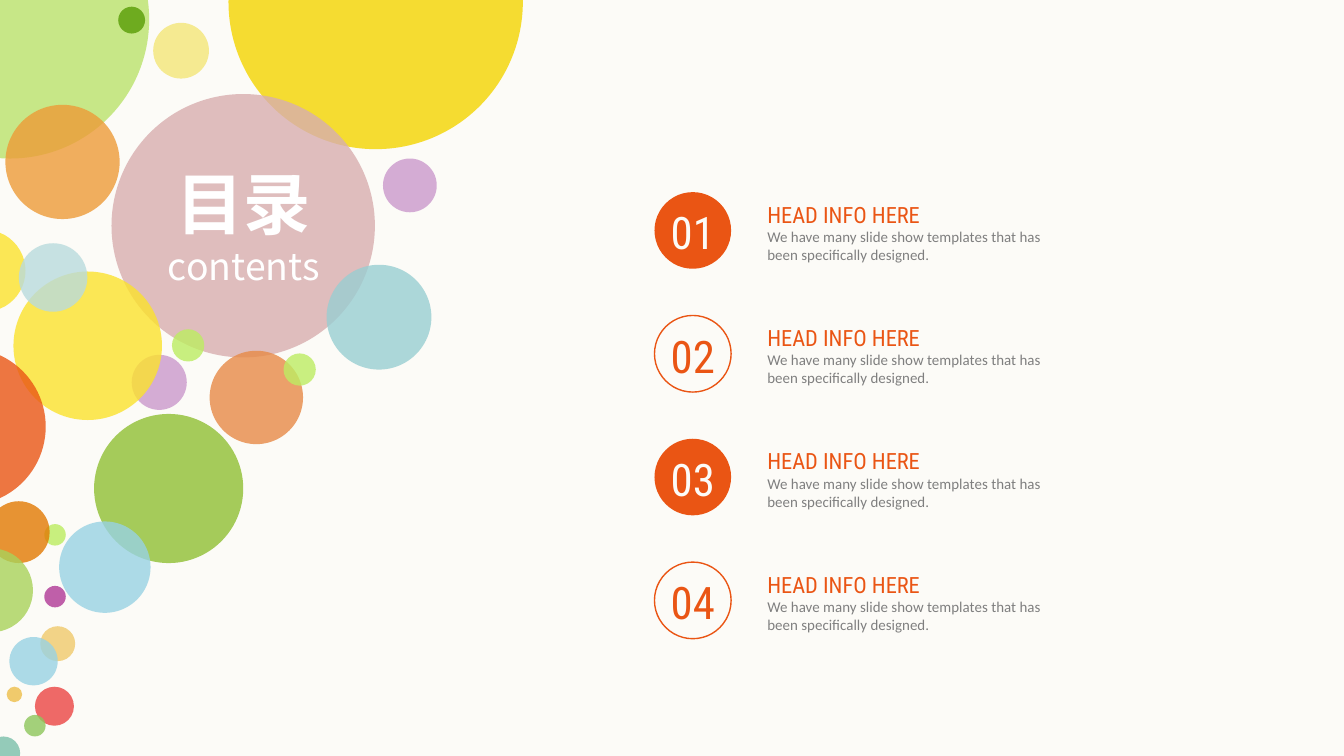
from collections import namedtuple

from lxml.etree import SubElement
from pptx import Presentation
from pptx.dml.color import RGBColor
from pptx.enum.shapes import MSO_SHAPE as Shape
from pptx.enum.text import MSO_AUTO_SIZE as AutoSize, PP_ALIGN as Align
from pptx.oxml.ns import qn
from pptx.util import Inches, Pt

# Square grid: the slide is 100 columns wide and 56.25 rows high
COLUMNS, ROWS = 100, 56.25
MODULE = Inches(10) / COLUMNS

PAPER, ORANGE, GRAY, WHITE = "FCFBF7", "EA5514", "7F7F7F", "FFFFFF"
HEAD_FONT, BODY_FONT, TITLE_FONT = "Roboto Condensed", "Calibri", "Noto Sans CJK SC"

Box = namedtuple("Box", "left top width height")
Span = namedtuple("Span", "text size font color bold", defaults=(False,))

# Left, top and diameter in grid modules, colour, opacity in percent; back to front
BUBBLES = [
    (-9.6, -8.9, 20.7, "BAE36B", 80),
    (8.8, 0.5, 2, "6EAB1F", 100),
    (0.4, 7.8, 8.5, "ED9B38", 80),
    (11.4, 1.7, 4.15, "F5EA91", 100),
    (17, -10.8, 21.9, "F4D500", 80),
    (8.3, 7, 19.6, "D8AEAF", 80),
    (24.3, 19.7, 7.8, "99CED2", 80),
    (28.5, 11.8, 4, "CB99CC", 80),
    (15.6, 26.1, 6.95, "E78A47", 80),
    (7, 30.8, 11.1, "A5CB5A", 100),
    (21.1, 26.3, 2.4, "BDED63", 80),
    (12.8, 24.5, 2.4, "BCED61", 80),
    (9.8, 26.4, 4.1, "CB99CC", 80),
    (1, 20.2, 11.05, "FBE22D", 80),
    (-4.2, 17.1, 6.1, "FBE22D", 80),
    (3.3, 39, 1.6, "BCED60", 80),
    (3.3, 43.6, 1.6, "B03896", 80),
    (3, 46.6, 2.6, "F0CA6C", 80),
    (0.5, 51.1, 1.15, "F0CA6C", 100),
    (-1, 54.8, 2.5, "7BBFAA", 80),
    (2.6, 51.1, 2.9, "EB4544", 80),
    (1.8, 53.2, 1.6, "8DC65B", 80),
    (0.7, 47.4, 3.6, "98D2E3", 80),
    (1.4, 18.1, 5.1, "B9DBDD", 80),
    (4.4, 38.8, 6.8, "98D2E3", 80),
    (-0.9, 37.3, 4.6, "E27902", 80),
    (-3.8, 40.8, 6.25, "A9D25A", 80),
    (-8.3, 25.9, 11.7, "EA5514", 80),
]

ENTRY = ("HEAD INFO HERE",
         "We have many slide show templates that has been specifically designed.")
ENTRIES = [ENTRY] * 4


def rgb(color):
    return RGBColor.from_string(color)


def to_length(box):
    return [round(value * MODULE) for value in box]


def add_circle(page, left, top, diameter, fill=None, opacity=100, line=None):
    circle = page.shapes.add_shape(
        Shape.OVAL, *to_length((left, top, diameter, diameter)))
    circle.shadow.inherit = False
    if fill:
        circle.fill.solid()
        circle.fill.fore_color.rgb = rgb(fill)
        if opacity < 100:
            color = circle.fill._xPr.find(f".//{qn('a:srgbClr')}")
            SubElement(color, qn("a:alpha"), val=str(opacity * 1000))
    else:
        circle.fill.background()
    if line:
        circle.line.color.rgb = rgb(line)
        circle.line.width = Pt(0.75)
    else:
        circle.line.fill.background()


def add_text(page, box, spans, align=Align.LEFT):
    """Place a text box with one paragraph for each span."""
    frame = page.shapes.add_textbox(*to_length(box)).text_frame
    frame.word_wrap = True
    frame.auto_size = AutoSize.SHAPE_TO_FIT_TEXT
    frame.margin_left = frame.margin_right = 0
    frame.margin_top = frame.margin_bottom = 0
    for index, span in enumerate(spans):
        para = frame.add_paragraph() if index else frame.paragraphs[0]
        para.alignment = align
        run = para.add_run()
        run.text = span.text
        run.font.size = Pt(span.size)
        run.font.bold = span.bold
        run.font.color.rgb = rgb(span.color)
        run.font.name = span.font
        SubElement(run.font._element, qn("a:ea"), typeface=span.font)


def draw_bubbles(page, box):
    for left, top, diameter, color, opacity in BUBBLES:
        add_circle(page, box.left + left, box.top + top, diameter, color, opacity)


def draw_title(page, box):
    add_text(page, box, [
        Span("目录", 36, TITLE_FONT, WHITE, True),
        Span("contents", 20, TITLE_FONT, WHITE),
    ], Align.CENTER)


def draw_entry(page, box, number, head, body):
    diameter = 5.7
    filled = number % 2 == 1

    # Numbered disc: odd ones filled, even ones outlined
    add_circle(page, box.left, box.top, diameter,
               fill=ORANGE if filled else None, line=None if filled else ORANGE)
    add_text(page, Box(box.left, box.top + 0.95, diameter, 4),
             [Span(f"{number:02}", 24, HEAD_FONT, PAPER if filled else ORANGE)],
             Align.CENTER)

    # Heading and description
    indent = 8.4
    add_text(page, Box(box.left + indent, box.top + 0.65, box.width - indent, 4.7), [
        Span(head, 12, HEAD_FONT, ORANGE),
        Span(body, 8, BODY_FONT, GRAY),
    ])


def draw_agenda(page, box):
    pitch = box.height / len(ENTRIES)
    for index, (head, body) in enumerate(ENTRIES):
        row = Box(box.left, box.top + index * pitch, box.width, pitch)
        draw_entry(page, row, index + 1, head, body)


def main():
    deck = Presentation()
    deck.slide_width = round(COLUMNS * MODULE)
    deck.slide_height = round(ROWS * MODULE)
    page = deck.slides.add_slide(deck.slide_layouts[6])
    page.background.fill.solid()
    page.background.fill.fore_color.rgb = rgb(PAPER)

    draw_bubbles(page, Box(0, 0, COLUMNS, ROWS))
    draw_title(page, Box(10.6, 12.1, 15.1, 9.4))
    draw_agenda(page, Box(48.7, 14.3, 29.7, 36.7))
    deck.save("out.pptx")


if __name__ == "__main__":
    main()
